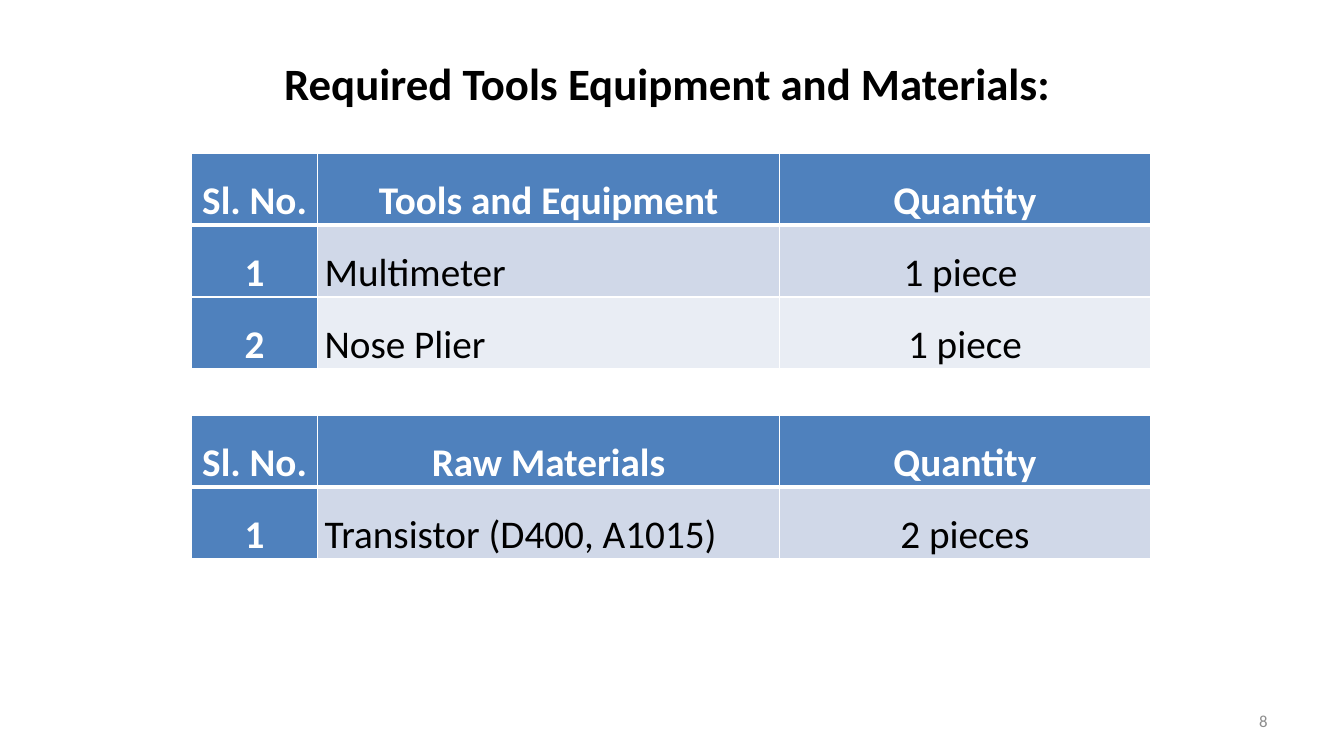
from lxml.etree import SubElement
from pptx import Presentation
from pptx.dml.color import RGBColor
from pptx.enum.text import MSO_ANCHOR as Anchor, PP_ALIGN as Align
from pptx.oxml.ns import qn
from pptx.util import Inches, Pt

SLIDE_WIDTH, SLIDE_HEIGHT = 13.33, 7.5
TABLE_LEFT = 1.9
COLUMN_WIDTHS = (1.25, 4.58, 3.68)
ROW_HEIGHT = 0.7
TABLE_GAP = 0.5
WHITE, BLACK, GREY, BLUE = "FFFFFF", "000000", "8C8C8C", "4F81BD"
BANDS = ("D0D8E8", "E9EDF4")

TOOLS = [
    ("Sl. No.", "Tools and Equipment", "Quantity"),
    ("1", "Multimeter", "1 piece "),
    ("2", "Nose Plier", "1 piece"),
]
MATERIALS = [
    ("Sl. No.", "Raw Materials", "Quantity"),
    ("1", "Transistor (D400, A1015)", "2 pieces"),
]


def color(hex_code):
    return RGBColor.from_string(hex_code)


def set_all(target, values):
    for name, value in values.items():
        setattr(target, name, value)


def write(frame, text, size, hex_code, align, bold=False, spacing=1.0):
    """Fill a text frame with one formatted paragraph."""
    para = frame.paragraphs[0]
    set_all(para, {"alignment": align, "line_spacing": spacing})
    span = para.add_run()
    span.text = text
    set_all(span.font, {"name": "Calibri", "size": Pt(size), "bold": bold})
    span.font.color.rgb = color(hex_code)


def add_borders(cell, top, bottom):
    """Draw white cell borders; top and bottom widths are in points."""
    properties = cell._tc.get_or_add_tcPr()
    for side, width in {"L": 1, "R": 1, "T": top, "B": bottom}.items():
        line = SubElement(properties, qn(f"a:ln{side}"), w=str(Pt(width)))
        fill = SubElement(line, qn("a:solidFill"))
        SubElement(fill, qn("a:srgbClr"), val=WHITE)


def format_cell(cell, text, row, column):
    heading = row == 0 or column == 0
    add_borders(cell, top=3 if row == 1 else 1, bottom=3 if row == 0 else 1)
    set_all(cell, {
        "margin_left": Inches(0.07), "margin_right": Inches(0.07),
        "margin_top": 0, "margin_bottom": 0,
    })
    cell.fill.solid()
    cell.fill.fore_color.rgb = color(BLUE if heading else BANDS[(row - 1) % 2])
    align = Align.LEFT if column == 1 and not heading else Align.CENTER
    write(cell.text_frame, text, 28, WHITE if heading else BLACK, align,
          bold=heading, spacing=1.5)


def add_item_table(page, top, rows):
    """Add a table and return the position of its lower edge."""
    height = ROW_HEIGHT * len(rows)
    table = page.shapes.add_table(
        len(rows), len(COLUMN_WIDTHS), Inches(TABLE_LEFT), Inches(top),
        Inches(sum(COLUMN_WIDTHS)), Inches(height)).table
    set_all(table, {"first_col": True, "horz_banding": False})
    for column, width in zip(table.columns, COLUMN_WIDTHS):
        column.width = Inches(width)
    for row, texts in enumerate(rows):
        table.rows[row].height = Inches(ROW_HEIGHT)
        for column, text in enumerate(texts):
            format_cell(table.cell(row, column), text, row, column)
    return top + height


def place(box, left, top, width, height):
    set_all(box, {"left": Inches(left), "top": Inches(top),
                  "width": Inches(width), "height": Inches(height)})
    set_all(box.text_frame, {"word_wrap": True,
                             "vertical_anchor": Anchor.MIDDLE})


def add_title(page, text):
    title = page.shapes.title
    place(title, 2.33, 0.3, 8.58, 1.03)
    write(title.text_frame, text, 32, BLACK, Align.CENTER, bold=True)


def add_page_number(page, number):
    box = page.shapes.add_textbox(0, 0, 0, 0)
    place(box, 9.56, 6.95, 3.11, 0.4)
    write(box.text_frame, number, 12, GREY, Align.RIGHT)


def main():
    deck = Presentation()
    set_all(deck, {"slide_width": Inches(SLIDE_WIDTH),
                   "slide_height": Inches(SLIDE_HEIGHT)})
    page = deck.slides.add_slide(deck.slide_layouts[5])
    add_title(page, "Required Tools Equipment and Materials:")
    tools_bottom = add_item_table(page, 1.52, TOOLS)
    add_item_table(page, tools_bottom + TABLE_GAP, MATERIALS)
    add_page_number(page, "8")
    deck.save("out.pptx")


if __name__ == "__main__":
    main()
